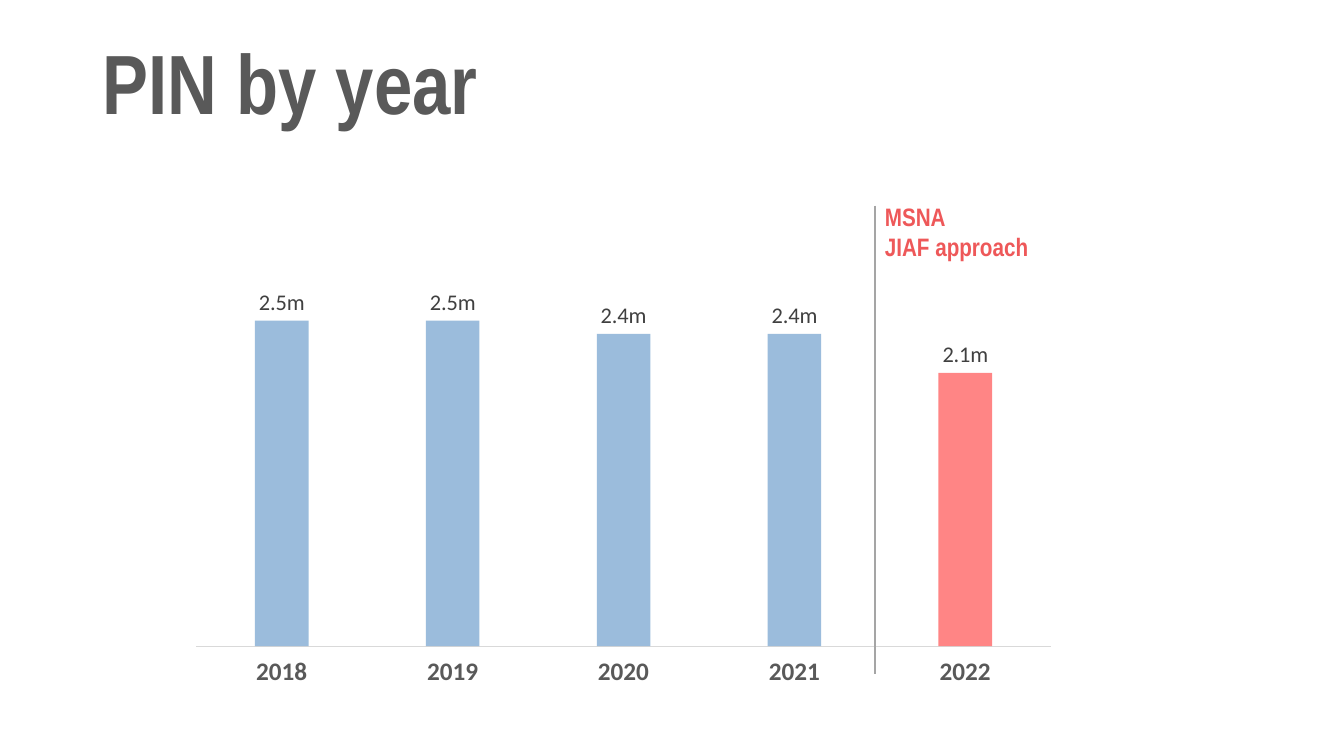
from dataclasses import dataclass

from pptx import Presentation
from pptx.chart.chart import Chart
from pptx.chart.data import CategoryChartData
from pptx.dml.color import RGBColor
from pptx.enum.chart import XL_CHART_TYPE, XL_LABEL_POSITION, XL_TICK_LABEL_POSITION, XL_TICK_MARK
from pptx.enum.shapes import MSO_CONNECTOR
from pptx.enum.text import MSO_ANCHOR, MSO_AUTO_SIZE, PP_ALIGN
from pptx.oxml import parse_xml
from pptx.oxml.ns import nsdecls, qn
from pptx.slide import Slide
from pptx.text.text import Font, TextFrame
from pptx.util import Cm, Pt


@dataclass(frozen=True)
class TextStyle:
    font: str
    size: float
    color: str
    bold: bool = False


@dataclass(frozen=True)
class Theme:
    title: TextStyle = TextStyle("Arial Narrow", 60, "595959", True)
    note: TextStyle = TextStyle("Arial Narrow", 18, "EE5859", True)
    category: TextStyle = TextStyle("Calibri", 18, "595959", True)
    value: TextStyle = TextStyle("Calibri", 16, "404040")
    chart: TextStyle = TextStyle("Calibri", 12, "000000")
    bar: str = "2E75B6"
    highlight: str = "FF0000"
    bar_alpha: int = 48
    axis: str = "D9D9D9"
    divider: str = "A5A5A5"


@dataclass(frozen=True)
class YearFigure:
    year: str
    millions: float
    highlighted: bool = False


@dataclass(frozen=True)
class Box:
    left: float
    top: float
    width: float
    height: float

    def lengths(self) -> tuple[Cm, Cm, Cm, Cm]:
        return Cm(self.left), Cm(self.top), Cm(self.width), Cm(self.height)


THEME = Theme()
FIGURES = [
    YearFigure("2018", 2.5),
    YearFigure("2019", 2.5),
    YearFigure("2020", 2.4),
    YearFigure("2021", 2.4),
    YearFigure("2022", 2.1, highlighted=True),
]
TITLE_BOX = Box(2.33, 0.89, 29.21, 2.59)
CHART_BOX = Box(4.5, 6.22, 22.43, 11.18)
NOTE_BOX = Box(22.05, 4.95, 5.33, 1.8)
DIVIDER = Box(NOTE_BOX.left, 5.18, 0, 11.81)
PLOT_SHARE = {"x": 0.02, "y": 0.02, "w": 0.96, "h": 0.88}


def style_font(font: Font, style: TextStyle) -> None:
    font.name = style.font
    font.size = Pt(style.size)
    font.bold = style.bold
    font.color.rgb = RGBColor.from_string(style.color)


def write_text(tf: TextFrame, text: str, style: TextStyle) -> None:
    tf.text = text
    tf.word_wrap = True
    for p in tf.paragraphs:
        p.alignment = PP_ALIGN.LEFT
        for r in p.runs:
            style_font(r.font, style)


def add_title(s: Slide, text: str) -> None:
    sp = s.shapes.title
    sp.left, sp.top, sp.width, sp.height = TITLE_BOX.lengths()
    tf = sp.text_frame
    write_text(tf, text, THEME.title)
    tf.auto_size = MSO_AUTO_SIZE.NONE
    tf.vertical_anchor = MSO_ANCHOR.BOTTOM
    tf.paragraphs[0].line_spacing = 0.9


def fix_plot_area(chart: Chart) -> None:
    """Pin the inner plot area to its share of the chart frame."""
    plot_area = chart._chartSpace.chart.plotArea
    for layout in plot_area.findall(qn("c:layout")):
        plot_area.remove(layout)
    modes = "".join(f'<c:{k}Mode val="edge"/>' for k in "xy")
    shares = "".join(f'<c:{k} val="{v}"/>' for k, v in PLOT_SHARE.items())
    plot_area.insert(0, parse_xml(
        f'<c:layout {nsdecls("c")}><c:manualLayout><c:layoutTarget val="inner"/>'
        f"{modes}{shares}</c:manualLayout></c:layout>"))


def style_axes(chart: Chart) -> None:
    years = chart.category_axis
    years.major_tick_mark = years.minor_tick_mark = XL_TICK_MARK.NONE
    years.has_major_gridlines = False
    years.tick_label_position = XL_TICK_LABEL_POSITION.LOW
    years.format.line.color.rgb = RGBColor.from_string(THEME.axis)
    years.format.line.width = Pt(0.75)
    style_font(years.tick_labels.font, THEME.category)

    values = chart.value_axis
    values.minimum_scale, values.maximum_scale, values.major_unit = 0, 3, 0.5
    values.has_major_gridlines = False
    values.visible = False


def style_bars(chart: Chart, figures: list[YearFigure]) -> None:
    plot = chart.plots[0]
    plot.gap_width, plot.overlap, plot.vary_by_categories = 219, -27, False
    series = plot.series[0]
    series.invert_if_negative = False
    formats = [(series.format, THEME.bar)]
    formats += [(series.points[i].format, THEME.highlight)
                for i, figure in enumerate(figures) if figure.highlighted]
    for fmt, color in formats:
        fmt.fill.solid()
        fmt.fill.fore_color.rgb = RGBColor.from_string(color)
    for color in series._element.xpath(".//c:spPr/a:solidFill/a:srgbClr"):
        color.append(parse_xml(f'<a:alpha {nsdecls("a")} val="{THEME.bar_alpha * 1000}"/>'))

    labels = series.data_labels
    labels.show_value = True
    labels.number_format = '0.0"m"'
    labels.number_format_is_linked = False
    labels.position = XL_LABEL_POSITION.OUTSIDE_END
    style_font(labels.font, THEME.value)


def add_year_chart(s: Slide, figures: list[YearFigure]) -> None:
    data = CategoryChartData()
    data.categories = [figure.year for figure in figures]
    data.add_series("Series 1", [figure.millions for figure in figures])
    chart = s.shapes.add_chart(
        XL_CHART_TYPE.COLUMN_CLUSTERED, *CHART_BOX.lengths(), data).chart
    chart.has_legend = chart.has_title = False
    style_font(chart.font, THEME.chart)
    style_axes(chart)
    style_bars(chart, figures)
    fix_plot_area(chart)


def add_note(s: Slide, text: str) -> None:
    tf = s.shapes.add_textbox(*NOTE_BOX.lengths()).text_frame
    write_text(tf, text, THEME.note)
    tf.auto_size = MSO_AUTO_SIZE.SHAPE_TO_FIT_TEXT


def add_divider(s: Slide) -> None:
    left, top, width, height = DIVIDER.lengths()
    line = s.shapes.add_connector(
        MSO_CONNECTOR.STRAIGHT, left, top, left + width, top + height)
    line.line.color.rgb = RGBColor.from_string(THEME.divider)
    line.line.width = Pt(1)
    line._element.spPr.append(parse_xml(f'<a:effectLst {nsdecls("a")}/>'))


def main() -> None:
    prs = Presentation()
    prs.slide_width, prs.slide_height = Cm(33.87), Cm(19.05)
    s = prs.slides.add_slide(prs.slide_layouts[5])
    add_title(s, "PIN by year")
    add_year_chart(s, FIGURES)
    add_note(s, "MSNA\nJIAF approach")
    add_divider(s)
    prs.save("out.pptx")


if __name__ == "__main__":
    main()
